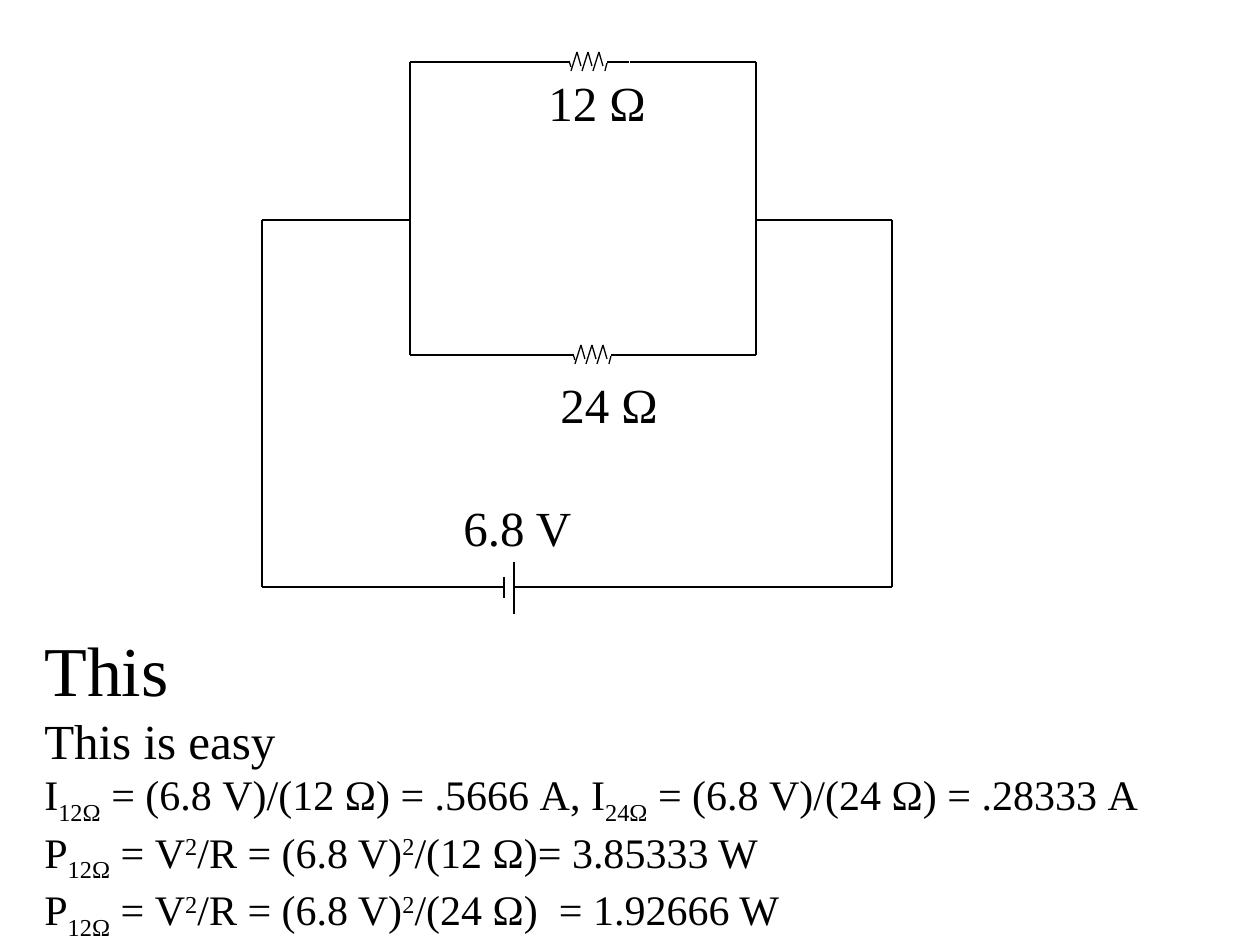
from lxml import etree
from pptx import Presentation
from pptx.dml.color import RGBColor
from pptx.enum.shapes import MSO_CONNECTOR
from pptx.enum.text import MSO_AUTO_SIZE
from pptx.oxml.ns import qn
from pptx.util import Pt

PX = 914400 // 126
STRAIGHT = MSO_CONNECTOR.STRAIGHT
FIT_SHAPE = MSO_AUTO_SIZE.SHAPE_TO_FIT_TEXT
COLORS = {"ink": "000000"}
FONT = "Times New Roman"
LABEL_SIZE = 28
BASELINES = {"sub": "-25000", "sup": "30000"}

# Circuit grid
OUTER_LEFT, INNER_LEFT, INNER_RIGHT, OUTER_RIGHT = 262, 410, 756, 892
TOP, MIDDLE, LOWER, BOTTOM = 62, 220, 355, 587
SHORT_PLATE, LONG_PLATE = 504, 514

WIRES = [
    (OUTER_LEFT, MIDDLE, OUTER_LEFT, BOTTOM),
    (OUTER_LEFT, BOTTOM, SHORT_PLATE, BOTTOM),
    (SHORT_PLATE, BOTTOM - 10, SHORT_PLATE, BOTTOM + 11),
    (LONG_PLATE, BOTTOM - 25, LONG_PLATE, BOTTOM + 27),
    (LONG_PLATE, BOTTOM, OUTER_RIGHT, BOTTOM),
    (OUTER_RIGHT, MIDDLE, OUTER_RIGHT, BOTTOM),
    (OUTER_LEFT, MIDDLE, INNER_LEFT, MIDDLE),
    (INNER_RIGHT, MIDDLE, OUTER_RIGHT, MIDDLE),
    (INNER_LEFT, TOP, INNER_LEFT, LOWER),
    (INNER_RIGHT, TOP, INNER_RIGHT, LOWER),
]
for branch_y in (TOP, LOWER):
    WIRES += [(INNER_LEFT, branch_y, 556, branch_y),
              (630, branch_y, INNER_RIGHT, branch_y)]

RESISTORS = [(548, TOP), (552, LOWER)]
# Resistor strokes, measured from the left end of its lead
RESISTOR_STROKES = [(0, 0, 21, 0), (21, -1, 23, 5), (59, 1, 57, 9), (59, 0, 81, 0)]
for peak in range(29, 53, 11):
    RESISTOR_STROKES += [(peak, -10, peak - 6, 9), (peak, -10, peak + 4, 4)]

LABELS = [
    ("6.8 V", (451, 491, 135, 72)),
    ("12 Ω", (536, 66, 125, 72)),
    ("24 Ω", (548, 368, 125, 72)),
]

POWER_START = [("P", None), ("12Ω", "sub"), (" = V", None), ("2", "sup"),
               ("/R = (6.8 V)", None), ("2", "sup")]
SOLUTION_BOX = (32, 620, 1228, 306)
SOLUTION = [
    (40, [("This", None)]),
    (28, [("This is easy", None)]),
    (24, [("I", None), ("12Ω", "sub"), (" = (6.8 V)/(12 Ω) = .5666 A, I", None),
          ("24Ω", "sub"), (" = (6.8 V)/(24 Ω) = .28333 A", None)]),
    (24, POWER_START + [("/(12 Ω)= 3.85333 W", None)]),
    (24, POWER_START + [("/(24 Ω)  = 1.92666 W", None)]),
]


def draw_line(shapes, stroke, dx=0, dy=0):
    x1, y1, x2, y2 = stroke
    line = shapes.add_connector(STRAIGHT, (x1 + dx) * PX, (y1 + dy) * PX,
                                (x2 + dx) * PX, (y2 + dy) * PX)
    line.line.color.rgb = RGBColor.from_string(COLORS["ink"])
    line.line.width = Pt(0.75)
    etree.SubElement(line._element.spPr, qn("a:effectLst"))


def add_text(shapes, box, lines, wrap):
    """Add a text box from (size, [(text, baseline kind), ...]) lines."""
    frame = shapes.add_textbox(*(value * PX for value in box)).text_frame
    frame.word_wrap = wrap
    frame.auto_size = FIT_SHAPE
    for index, (size, parts) in enumerate(lines):
        paragraph = frame.add_paragraph() if index else frame.paragraphs[0]
        for text, baseline in parts:
            run = paragraph.add_run()
            run.text = text
            for key, value in {"name": FONT, "size": Pt(size)}.items():
                setattr(run.font, key, value)
            run.font.color.rgb = RGBColor.from_string(COLORS["ink"])
            if baseline:
                run._r.get_or_add_rPr().set("baseline", BASELINES[baseline])


def main():
    deck = Presentation()
    deck.slide_width, deck.slide_height = 1260 * PX, 945 * PX
    shapes = deck.slides.add_slide(deck.slide_layouts[6]).shapes

    add_text(shapes, SOLUTION_BOX, SOLUTION, True)
    for wire in WIRES:
        draw_line(shapes, wire)
    for x, y in RESISTORS:
        resistor = shapes.add_group_shape()
        for stroke in RESISTOR_STROKES:
            draw_line(resistor.shapes, stroke, x, y)
    for label, box in LABELS:
        add_text(shapes, box, [(LABEL_SIZE, [(label, None)])], False)

    deck.save("out.pptx")


if __name__ == "__main__":
    main()
